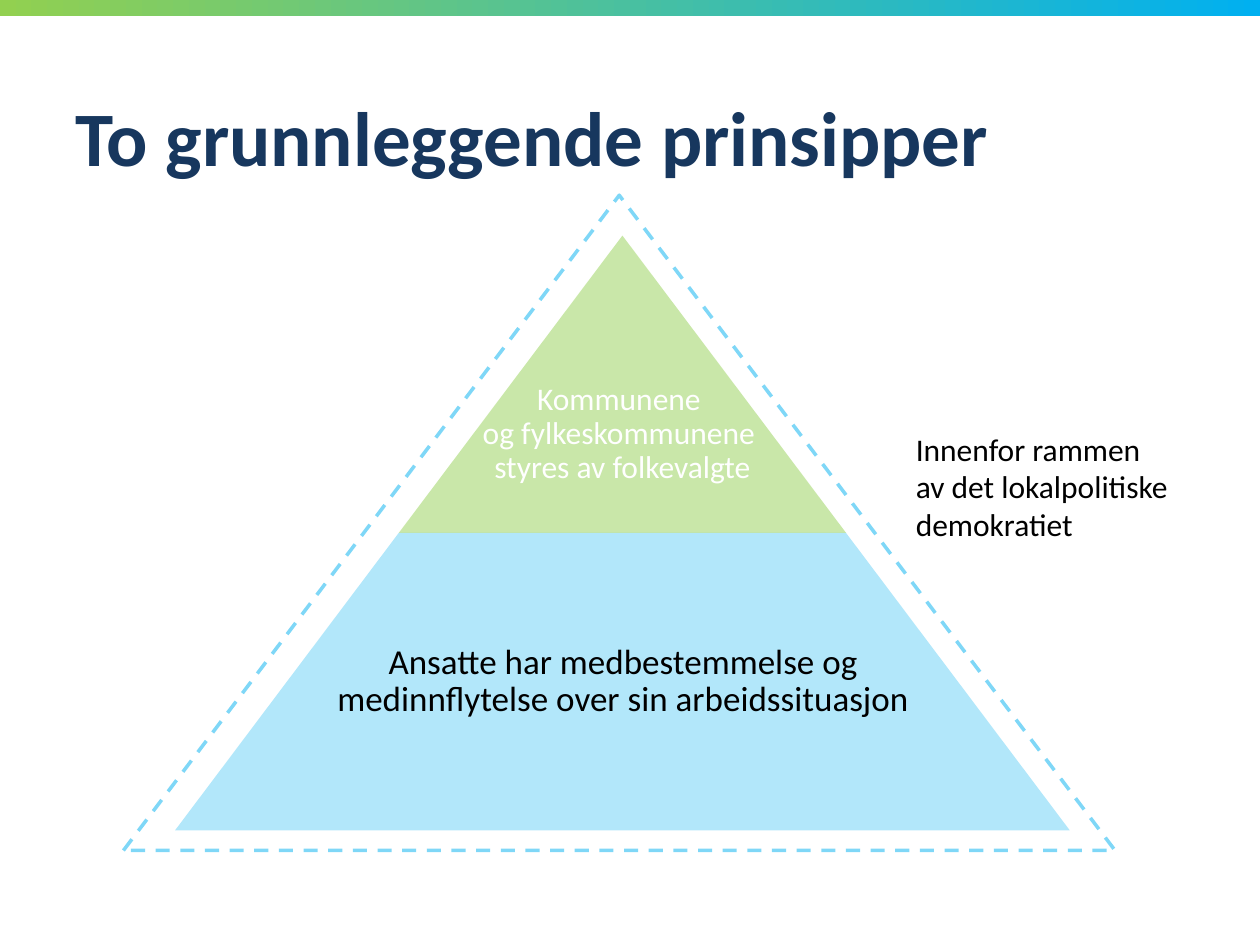
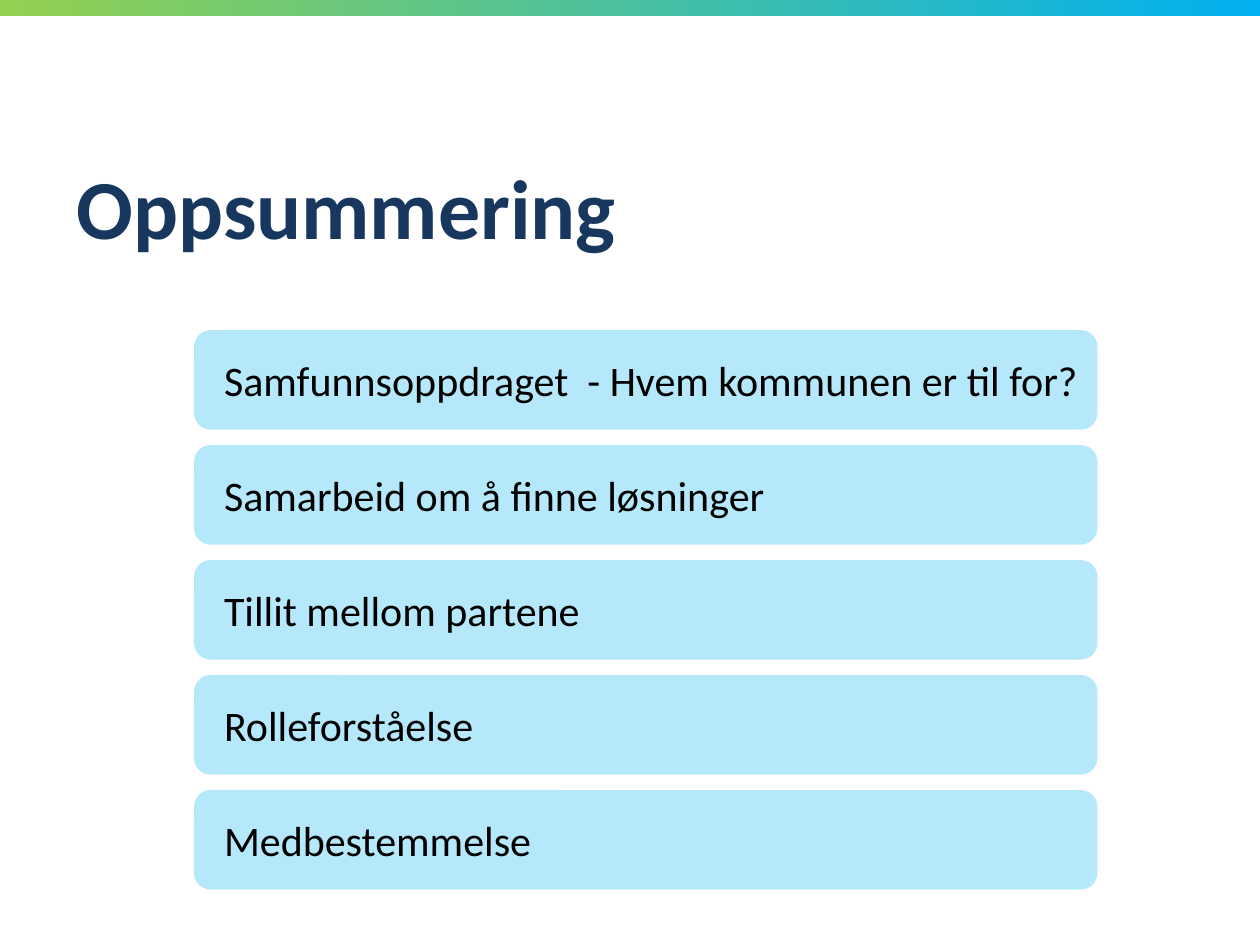
"""Build two slides on local democracy and co-determination."""
from dataclasses import dataclass

from lxml import etree
from pptx import Presentation
from pptx.dml.color import RGBColor
from pptx.enum.dml import MSO_LINE
from pptx.enum.shapes import MSO_SHAPE
from pptx.enum.text import MSO_ANCHOR, PP_ALIGN
from pptx.oxml.ns import qn
from pptx.presentation import Presentation as Deck
from pptx.shapes.autoshape import Shape
from pptx.slide import Slide
from pptx.util import Inches, Pt

RECT, ROUNDED = MSO_SHAPE.RECTANGLE, MSO_SHAPE.ROUNDED_RECTANGLE
TRAPEZOID, TRIANGLE = MSO_SHAPE.TRAPEZOID, MSO_SHAPE.ISOSCELES_TRIANGLE
TOP, MIDDLE = MSO_ANCHOR.TOP, MSO_ANCHOR.MIDDLE
LEFT, CENTER = PP_ALIGN.LEFT, PP_ALIGN.CENTER
DASH = MSO_LINE.DASH


@dataclass(frozen=True)
class Theme:
    """Colours, font and type sizes shared by the slides."""
    green: str = "92D050"
    blue: str = "00B0F0"
    navy: str = "17375E"
    black: str = "000000"
    white: str = "FFFFFF"
    font: str = "Calibri"
    title: int = 44
    large_title: int = 48
    item: int = 24
    base: int = 20
    small: int = 18


@dataclass(frozen=True)
class Box:
    """A position and size in inches."""
    x: float
    y: float
    w: float
    h: float

    def emu(self) -> tuple[int, ...]:
        """Return the box as lengths."""
        return tuple(Inches(v) for v in (self.x, self.y, self.w, self.h))


@dataclass(frozen=True)
class Tier:
    """One level of the pyramid with its label."""
    box: Box
    label_box: Box
    text: str
    size: int
    color: str
    fill: str
    opacity: int
    top_inset: float


THEME = Theme()
INSETS = (0.1, 0.05, 0.1, 0.05)
TIER_H, TIER_Y, APEX_X, TOP_W = 2.36, 1.87, 4.94, 3.55
UPPER = Box(APEX_X - TOP_W / 2, TIER_Y, TOP_W, TIER_H)
LOWER = Box(APEX_X - TOP_W, TIER_Y + TIER_H, 2 * TOP_W, TIER_H)
TIERS = (
    Tier(UPPER, UPPER,
         "Kommunene \vog fylkeskommunene \vstyres av folkevalgte",
         THEME.small, THEME.white, THEME.green, 49, 0.83),
    Tier(LOWER, Box(2.64, LOWER.y, 4.61, TIER_H),
         "Ansatte har medbestemmelse og medinnflytelse over sin arbeidssituasjon",
         THEME.base, THEME.black, THEME.blue, 30, 0.03),
)
SUMMARY = (
    "Samfunnsoppdraget  - Hvem kommunen er til for?",
    "Samarbeid om å finne løsninger",
    "Tillit mellom partene",
    "Rolleforståelse",
    "Medbestemmelse",
)
FIRST_ITEM_Y, LAST_ITEM_Y = 2.62, 6.27


def set_opacity(sp: Shape, percent: int) -> None:
    """Make the colour of a shape's fill or line partly transparent."""
    for color in sp._element.spPr.iter(qn("a:srgbClr")):
        etree.SubElement(color, qn("a:alpha"), val=str(percent * 1000))


def add_shape(s: Slide, kind: MSO_SHAPE, box: Box, fill: str | None = None,
              opacity: int = 100) -> Shape:
    """Add a shape without outline or shadow."""
    sp = s.shapes.add_shape(kind, *box.emu())
    sp.shadow.inherit = False
    sp.line.fill.background()
    if fill:
        sp.fill.solid()
        sp.fill.fore_color.rgb = RGBColor.from_string(fill)
        set_opacity(sp, opacity)
    else:
        sp.fill.background()
    return sp


def write(sp: Shape, *texts: str, size: int, color: str = THEME.black,
          bold: bool = False, align: PP_ALIGN = LEFT,
          anchor: MSO_ANCHOR = MIDDLE, spacing: float = 1.0,
          insets: tuple[float, ...] = INSETS) -> None:
    """Fill a shape with formatted paragraphs."""
    tf = sp.text_frame
    tf.word_wrap = True
    tf.vertical_anchor = anchor
    tf.margin_left, tf.margin_top, tf.margin_right, tf.margin_bottom = map(Inches, insets)
    for i, text in enumerate(texts):
        p = tf.add_paragraph() if i else tf.paragraphs[0]
        p.text = text
        p.alignment = align
        p.line_spacing = spacing
        for r in p.runs:
            r.font.name = THEME.font
            r.font.size = Pt(size)
            r.font.bold = bold
            r.font.color.rgb = RGBColor.from_string(color)


def add_text(s: Slide, box: Box, *texts: str, **style) -> None:
    """Add a text box."""
    write(s.shapes.add_textbox(*box.emu()), *texts, **style)


def new_slide(prs: Deck, title: str, box: Box, size: int) -> Slide:
    """Add a slide with the gradient band and a title."""
    s = prs.slides.add_slide(prs.slide_layouts[6])
    band = add_shape(s, RECT, Box(0, 0, 10, 0.13))
    band.fill.gradient()
    band.fill.gradient_angle = 0
    for stop, color in zip(band.fill.gradient_stops, (THEME.green, THEME.blue)):
        stop.color.rgb = RGBColor.from_string(color)
    add_text(s, box, title, size=size, color=THEME.navy, bold=True)
    return s


def add_tier(s: Slide, tier: Tier) -> None:
    """Draw a pyramid level and its label."""
    sp = add_shape(s, TRAPEZOID, tier.box, tier.fill, tier.opacity)
    sp.adjustments[0] = TOP_W / 2 / TIER_H
    add_text(s, tier.label_box, tier.text, size=tier.size, color=tier.color,
             align=CENTER, spacing=0.9, insets=(0.03, tier.top_inset, 0.03, 0.03))


def principles_slide(prs: Deck) -> None:
    """Build the pyramid of the two principles."""
    s = new_slide(prs, "To grunnleggende prinsipper", Box(0.5, 0.45, 9, 1.25), THEME.title)
    for tier in TIERS:
        add_tier(s, tier)
    add_text(s, Box(7.17, 3.36, 2.8, 1.01), "Innenfor rammen",
             "av det lokalpolitiske demokratiet", size=THEME.small, anchor=TOP)
    frame = add_shape(s, TRIANGLE, Box(0.98, 1.55, 7.87, 5.2))
    frame.line.color.rgb = RGBColor.from_string(THEME.blue)
    frame.line.width = Pt(2)
    frame.line.dash_style = DASH
    set_opacity(frame, 50)


def summary_slide(prs: Deck) -> None:
    """Build the list of summary points."""
    s = new_slide(prs, "Oppsummering", Box(0.51, 0.81, 9, 1.65), THEME.large_title)
    pitch = (LAST_ITEM_Y - FIRST_ITEM_Y) / (len(SUMMARY) - 1)
    for i, text in enumerate(SUMMARY):
        box = Box(1.54, FIRST_ITEM_Y + i * pitch, 7.17, 0.79)
        sp = add_shape(s, ROUNDED, box, THEME.blue, 29)
        write(sp, text, size=THEME.item, insets=(0.2, 0.05, 0.1, 0.05))


def main() -> None:
    """Build and save the presentation."""
    prs = Presentation()
    prs.slide_width, prs.slide_height = Inches(10), Inches(7.5)
    principles_slide(prs)
    summary_slide(prs)
    prs.save("out.pptx")


if __name__ == "__main__":
    main()
